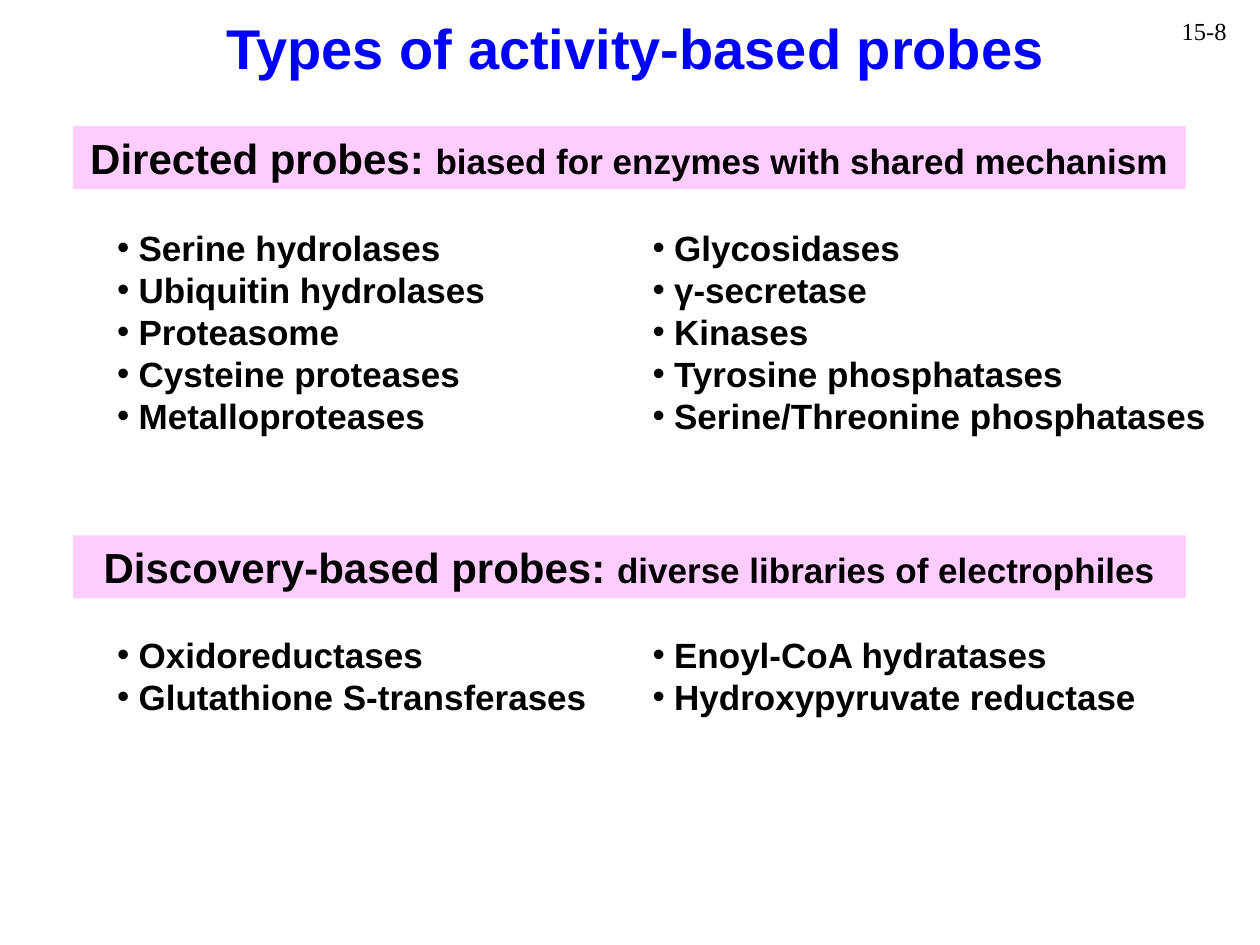
from dataclasses import dataclass

from lxml.etree import SubElement
from pptx import Presentation
from pptx.dml.color import RGBColor
from pptx.enum.shapes import MSO_SHAPE as Shape
from pptx.enum.text import MSO_ANCHOR as Anchor, MSO_AUTO_SIZE as AutoSize, PP_ALIGN as Align
from pptx.oxml.ns import qn
from pptx.util import Inches, Pt


@dataclass(frozen=True)
class Theme:
    font: str = "Arial"
    number_font: str = "Times New Roman"
    text: str = "000000"
    title: str = "0000FF"
    band: str = "FFCCFF"
    title_size: int = 32
    heading_size: int = 24
    body_size: int = 20
    number_size: int = 14


THEME = Theme()
TITLE = "Types of activity-based probes"
PAGE_NUMBER = "15-8"
SECTIONS = [
    {
        "top": 1.0,
        "heading": "Directed probes: ",
        "detail": "biased for enzymes with shared mechanism",
        "list_offset": 0.75,
        "columns": [
            ["Serine hydrolases", "Ubiquitin hydrolases", "Proteasome",
             "Cysteine proteases", "Metalloproteases"],
            ["Glycosidases", "γ-secretase", "Kinases",
             "Tyrosine phosphatases", "Serine/Threonine phosphatases"],
        ],
    },
    {
        "top": 4.25,
        "heading": "Discovery-based probes: ",
        "detail": "diverse libraries of electrophiles",
        "list_offset": 0.73,
        "columns": [
            ["Oxidoreductases", "Glutathione S-transferases"],
            ["Enoyl-CoA hydratases", "Hydroxypyruvate reductase"],
        ],
    },
]
BAND_LEFT, BAND_WIDTH, BAND_HEIGHT = 0.58, 8.83, 0.5
COLUMN_LEFTS, COLUMN_WIDTH = (0.83, 5.08), 4.83
LINE_HEIGHT, LIST_PADDING = 0.33, 0.1
BULLET_INDENT = 0.17


def place(shape, left, top, width, height):
    shape.left, shape.top = Inches(left), Inches(top)
    shape.width, shape.height = Inches(width), Inches(height)


def add_bullet(paragraph):
    properties = paragraph._p.get_or_add_pPr()
    indent = Inches(BULLET_INDENT)
    properties.set("marL", str(indent))
    properties.set("indent", str(-indent))
    SubElement(properties, qn("a:buFont")).set("typeface", THEME.font)
    SubElement(properties, qn("a:buChar")).set("char", "•")


def write(shape, paragraphs, *, size=THEME.body_size, font=THEME.font, color=THEME.text,
          bold=True, align=Align.LEFT, anchor=Anchor.TOP, bullets=False, wrap=True):
    """Fill a shape; each paragraph is a string or a list of (text, size) runs."""
    frame = shape.text_frame
    frame.word_wrap = wrap
    frame.auto_size = AutoSize.NONE
    frame.vertical_anchor = anchor
    frame.margin_left = frame.margin_right = Inches(0.1)
    frame.margin_top = frame.margin_bottom = Inches(0.05)
    for index, content in enumerate(paragraphs):
        paragraph = frame.add_paragraph() if index else frame.paragraphs[0]
        paragraph.alignment = align
        paragraph.line_spacing = 1.0
        paragraph.space_before = paragraph.space_after = Pt(0)
        if bullets:
            add_bullet(paragraph)
        for text, run_size in [(content, size)] if isinstance(content, str) else content:
            run = paragraph.add_run()
            run.text = text
            run.font.name, run.font.size, run.font.bold = font, Pt(run_size), bold
            run.font.color.rgb = RGBColor.from_string(color)


def add_band(slide, section):
    band = slide.shapes.add_shape(
        Shape.RECTANGLE, Inches(BAND_LEFT), Inches(section["top"]),
        Inches(BAND_WIDTH), Inches(BAND_HEIGHT))
    band.shadow.inherit = False
    band.fill.solid()
    band.fill.fore_color.rgb = RGBColor.from_string(THEME.band)
    band.line.fill.background()
    runs = [(section["heading"], THEME.heading_size), (section["detail"], THEME.body_size)]
    write(band, [runs], align=Align.CENTER, anchor=Anchor.MIDDLE)


def main():
    presentation = Presentation()
    presentation.slide_width, presentation.slide_height = Inches(10), Inches(7.5)
    comparison_layout = presentation.slide_layouts.get_by_name("Comparison")
    slide = presentation.slides.add_slide(comparison_layout)

    title = slide.shapes.title
    place(title, 0.34, 0.06, 9.41, 0.63)
    write(title, [TITLE], size=THEME.title_size, color=THEME.title, align=Align.CENTER)

    number = slide.shapes.add_textbox(Inches(9.28), Inches(0.08), Inches(0.69), Inches(0.33))
    write(number, [PAGE_NUMBER], size=THEME.number_size, font=THEME.number_font,
          bold=False, wrap=False)

    bodies = iter([holder for holder in slide.placeholders if holder.placeholder_format.idx])
    for section in SECTIONS:
        add_band(slide, section)
        for left, items in zip(COLUMN_LEFTS, section["columns"]):
            body = next(bodies)
            place(body, left, section["top"] + section["list_offset"],
                  COLUMN_WIDTH, len(items) * LINE_HEIGHT + LIST_PADDING)
            write(body, items, bullets=True)

    presentation.save("out.pptx")


if __name__ == "__main__":
    main()
